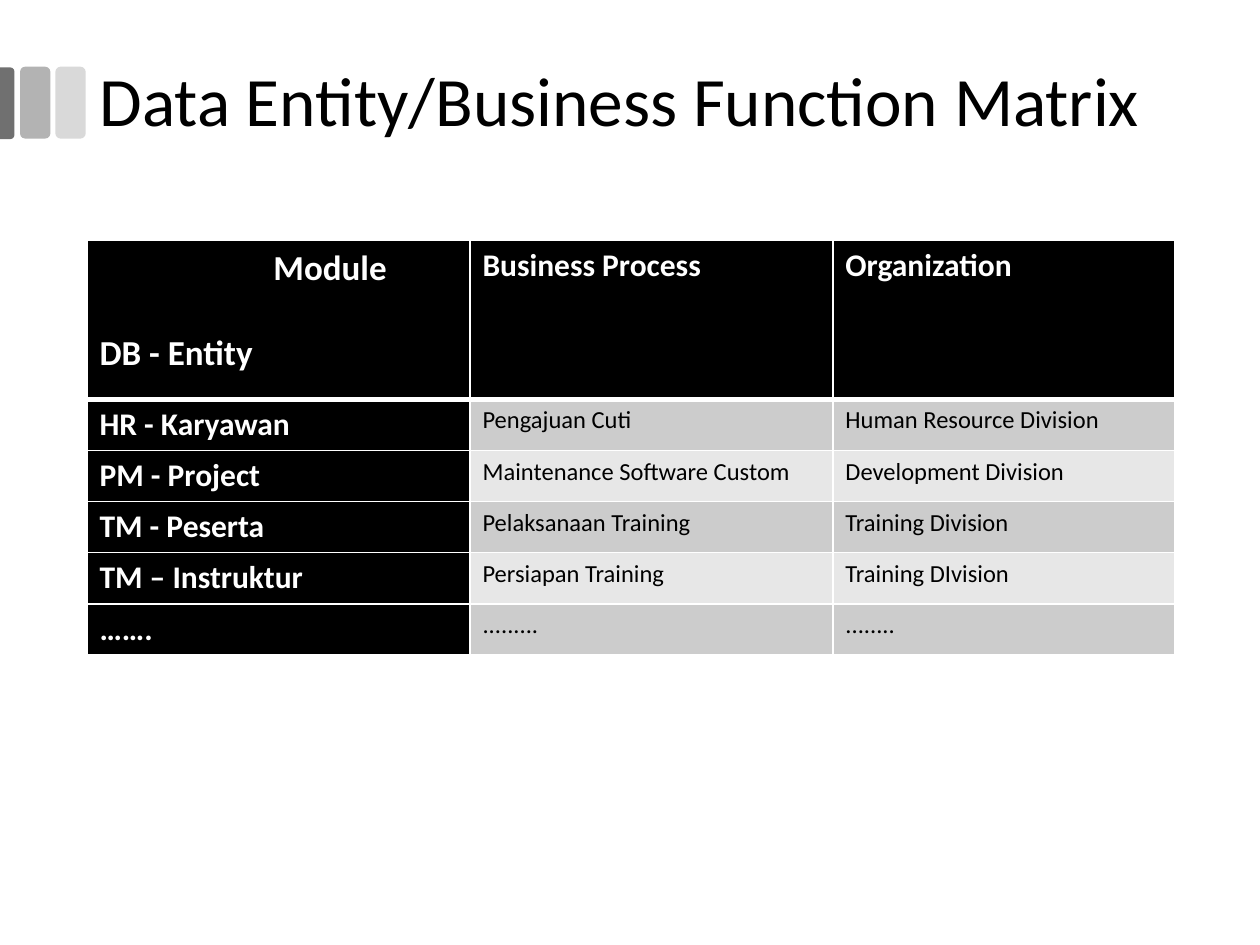
import pptx
import pptx.dml.color
import pptx.enum.shapes
import pptx.enum.text
import pptx.oxml
import pptx.oxml.ns
import pptx.util

Inches = pptx.util.Inches
Pt = pptx.util.Pt
RGBColor = pptx.dml.color.RGBColor
Shape = pptx.enum.shapes.MSO_SHAPE
Text = pptx.enum.text

BLACK = RGBColor(0x00, 0x00, 0x00)
WHITE = RGBColor(0xFF, 0xFF, 0xFF)
DARK_BAR = RGBColor(0x70, 0x70, 0x70)
MIDDLE_BAR = RGBColor(0xB3, 0xB3, 0xB3)
LIGHT_BAR = RGBColor(0xD9, 0xD9, 0xD9)
BANDS = [RGBColor(0xCC, 0xCC, 0xCC), RGBColor(0xE7, 0xE7, 0xE7)]

COLUMN_WIDTHS = [3.04, 2.88, 2.71]
HEADER_HEIGHT = 1.26
ROW_HEIGHT = 0.4
MATRIX = [
    ["Module\nDB - Entity", "Business Process", "Organization"],
    ["HR - Karyawan", "Pengajuan Cuti", "Human Resource Division"],
    ["PM - Project", "Maintenance Software Custom", "Development Division"],
    ["TM - Peserta", "Pelaksanaan Training", "Training Division"],
    ["TM – Instruktur", "Persiapan Training", "Training DIvision"],
    ["…….", ".........", "........"],
]


class SlideBuilder:
    """Hold the style and the current slide, and add its elements."""

    font_name = "Calibri"
    heading = {"size": Pt(18), "bold": True}
    corner = {"size": Pt(20), "bold": True}
    body = {"size": Pt(14), "bold": False}

    def __init__(self, page):
        self.page = page

    def format_text(self, para, color, values):
        for name, value in {"name": self.font_name, **values}.items():
            setattr(para.font, name, value)
        para.font.color.rgb = color

    def title(self, text, left, top, width, height):
        box = self.page.shapes.title
        frame = box.text_frame
        place = {"left": left, "top": top, "width": width, "height": height}
        for name, value in place.items():
            setattr(box, name, Inches(value))
        frame.text = text
        frame.auto_size = Text.MSO_AUTO_SIZE.NONE
        frame.vertical_anchor = Text.MSO_ANCHOR.MIDDLE
        para = frame.paragraphs[0]
        para.alignment = Text.PP_ALIGN.LEFT
        para.line_spacing = 0.9
        self.format_text(para, BLACK, {"size": Pt(39.6)})

    def bar(self, kind, color, left, top, width, height, rotation=0):
        box = self.page.shapes.add_shape(
            kind, Inches(left), Inches(top), Inches(width), Inches(height))
        box.rotation = rotation
        box.shadow.inherit = False
        box.fill.solid()
        box.fill.fore_color.rgb = color
        box.line.fill.background()
        return box

    def borders(self, cell, top, bottom):
        properties = cell._tc.get_or_add_tcPr()
        for side, width in {"L": 1, "R": 1, "T": top, "B": bottom}.items():
            properties.append(pptx.oxml.parse_xml(
                f'<a:ln{side} {pptx.oxml.ns.nsdecls("a")} w="{Pt(width)}">'
                f'<a:solidFill><a:srgbClr val="{WHITE}"/></a:solidFill>'
                f'</a:ln{side}>'))

    def cell(self, cell, text, row, column):
        is_heading = row == 0 or column == 0
        self.borders(cell, 3 if row == 1 else 1, 3 if row == 0 else 1)
        cell.fill.solid()
        cell.fill.fore_color.rgb = BLACK if is_heading else BANDS[(row - 1) % 2]
        cell.text = text
        values = self.heading if is_heading else self.body
        if row == column == 0:
            values = self.corner
        for para in cell.text_frame.paragraphs:
            self.format_text(para, WHITE if is_heading else BLACK, values)

    def matrix(self, rows, left, top):
        height = HEADER_HEIGHT + ROW_HEIGHT * (len(rows) - 1)
        table = self.page.shapes.add_table(
            len(rows), len(COLUMN_WIDTHS), Inches(left), Inches(top),
            Inches(sum(COLUMN_WIDTHS)), Inches(height)).table
        for column, width in zip(table.columns, COLUMN_WIDTHS):
            column.width = Inches(width)
        for row, texts in enumerate(rows):
            table.rows[row].height = Inches(ROW_HEIGHT if row else HEADER_HEIGHT)
            for column, text in enumerate(texts):
                self.cell(table.cell(row, column), text, row, column)
        module, entity = table.cell(0, 0).text_frame.paragraphs
        module._p.get_or_add_pPr().set("marL", str(Inches(1.38)))
        entity.space_before = Pt(24)


def main():
    deck = pptx.Presentation()
    deck.slide_width, deck.slide_height = Inches(10), Inches(7.5)
    builder = SlideBuilder(deck.slides.add_slide(deck.slide_layouts[5]))
    builder.bar(Shape.ROUNDED_RECTANGLE, LIGHT_BAR, 0.44, 0.53, 0.24, 0.57)
    builder.bar(Shape.ROUNDED_RECTANGLE, MIDDLE_BAR, 0.16, 0.53, 0.24, 0.57)
    edge = builder.bar(
        Shape.ROUND_2_SAME_RECTANGLE, DARK_BAR, -0.23, 0.76, 0.57, 0.12, 90)
    edge.adjustments[0] = 0.29
    builder.title("Data Entity/Business Function Matrix", 0.69, 0.17, 8.62, 1.31)
    builder.matrix(MATRIX, 0.69, 1.91)
    deck.save("out.pptx")


if __name__ == "__main__":
    main()
